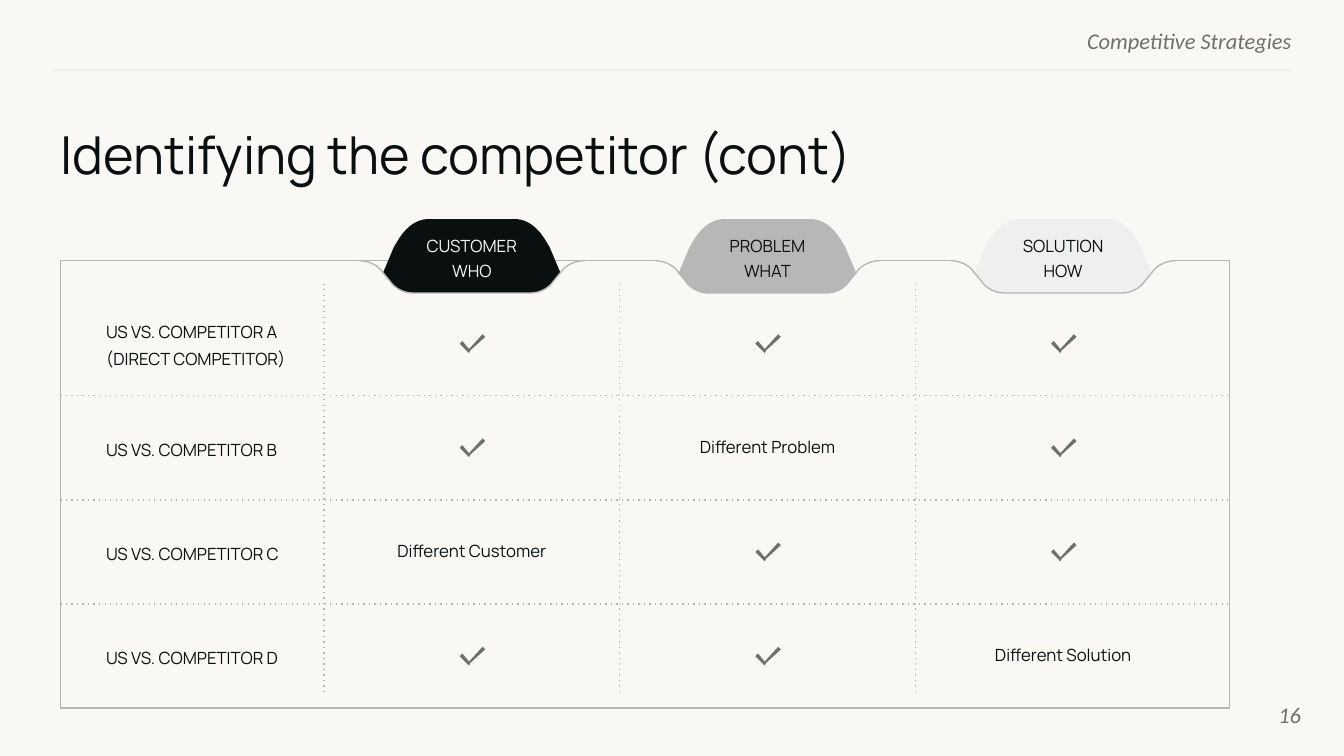
import lxml.etree
import pptx
import pptx.dml.color
import pptx.enum.dml
import pptx.enum.shapes
import pptx.enum.text
import pptx.oxml.ns
import pptx.util

RGB = pptx.dml.color.RGBColor
PAPER = RGB(0xF9, 0xF8, 0xF5)
INK = RGB(0x09, 0x10, 0x0F)
GREY = RGB(0x6C, 0x70, 0x6F)
RULE = RGB(0xB5, 0xB7, 0xB7)
MID = RGB(0xB7, 0xB7, 0xB7)
PALE = RGB(0xEF, 0xEF, 0xEF)

ALIGN = pptx.enum.text.PP_ALIGN
ANCHOR = pptx.enum.text.MSO_ANCHOR
WIDTH, HEIGHT = 1000, 562.5
LEFT, RIGHT, TOP, BOTTOM = 45, 915, 194, 527
COL_0, COL_STEP = 241, 220
ROW_0, ROW_STEP = 217, 77.5

HEADERS = [
    ("CUSTOMER\nWHO", INK, PAPER),
    ("PROBLEM\nWHAT", MID, INK),
    ("SOLUTION\nHOW", PALE, INK),
]
ROWS = [
    ("US VS. COMPETITOR A\n(DIRECT COMPETITOR)", ["", "", ""]),
    ("US VS. COMPETITOR B", ["", "Different Problem", ""]),
    ("US VS. COMPETITOR C", ["Different Customer", "", ""]),
    ("US VS. COMPETITOR D", ["", "", "Different Solution"]),
]
CHECK = [(8, -7), (-2, 4), (-7, -2), (-9, 0), (-2, 7), (-1, 5), (10, -5)]


def unit(n):
    return round(n * pptx.util.Inches(0.01))


def col_mid(col):
    return COL_0 + COL_STEP * (col + 0.5)


def row_mid(row):
    return ROW_0 + ROW_STEP * (row + 0.5)


def curve(a, b, c, d, steps=12):
    ts = [i / steps for i in range(steps + 1)]
    return [
        tuple(
            (1 - t) ** 3 * p + 3 * (1 - t) ** 2 * t * q + 3 * (1 - t) * t * t * u + t**3 * v
            for p, q, u, v in zip(a, b, c, d)
        )
        for t in ts
    ]


def mirrored(half):
    return half + [(-x, y) for x, y in reversed(half)]


BOWL = curve((61, 209), (57, 215), (50, 218), (44, 218))
NOTCH = mirrored(curve((84, 194), (77, 194), (70, 197), (66, 203)) + BOWL)
MASK = NOTCH + [(-84, 184), (84, 184)]
TAB = mirrored(
    curve((32, 163), (41, 163), (49, 169), (55, 179)) + [(58, 184), (66, 203)] + BOWL
)


class Deck:
    """Draw styled elements on a slide gridded in 1000 columns by 562.5 rows."""

    def __init__(self):
        self.prs = pptx.Presentation()
        self.prs.slide_width = unit(WIDTH)
        self.prs.slide_height = unit(HEIGHT)
        self.s = self.prs.slides.add_slide(self.prs.slide_layouts[6])
        self.s.background.fill.solid()
        self.s.background.fill.fore_color.rgb = PAPER

    def fill_text(self, sp, text, size=9, color=INK, font="Manrope", italic=False,
                  align=ALIGN.LEFT, anchor=ANCHOR.MIDDLE, spacing=None, insets=(0, 0, 0, 0)):
        tf = sp.text_frame
        tf.text = text
        tf.word_wrap = True
        tf.vertical_anchor = anchor
        tf.margin_left, tf.margin_top, tf.margin_right, tf.margin_bottom = map(unit, insets)
        for p in tf.paragraphs:
            p.alignment = align
            p.line_spacing = spacing
            for r in p.runs:
                r.font.name = font
                r.font.size = pptx.util.Pt(size)
                r.font.italic = italic
                r.font.color.rgb = color

    def text(self, x, y, w, h, text, **style):
        sp = self.s.shapes.add_textbox(unit(x), unit(y), unit(w), unit(h))
        self.fill_text(sp, text, **style)

    def cell(self, x, y, w, h, text, align=ALIGN.LEFT):
        self.text(x, y, w, h, text, align=align, spacing=1.33, insets=(7, 0, 7, 4))

    def paint(self, sp, fill=None, line=None):
        sp.shadow.inherit = False
        if fill is None:
            sp.fill.background()
        else:
            sp.fill.solid()
            sp.fill.fore_color.rgb = fill
        if line is None:
            sp.line.fill.background()
        else:
            sp.line.color.rgb = line
            sp.line.width = pptx.util.Pt(0.75)

    def box(self, x, y, w, h, line):
        kind = pptx.enum.shapes.MSO_SHAPE.RECTANGLE
        sp = self.s.shapes.add_shape(kind, unit(x), unit(y), unit(w), unit(h))
        self.paint(sp, line=line)

    def outline(self, points, dx, dy=0, fill=None, line=None):
        pts = [(unit(x + dx), unit(y + dy)) for x, y in points]
        fb = self.s.shapes.build_freeform(*pts[0], scale=1.0)
        fb.add_line_segments(pts[1:], close=fill is not None)
        sp = fb.convert_to_shape()
        self.paint(sp, fill, line)
        return sp

    def rule(self, x1, y1, x2, y2, color=RULE, dotted=True):
        kind = pptx.enum.shapes.MSO_CONNECTOR.STRAIGHT
        c = self.s.shapes.add_connector(kind, unit(x1), unit(y1), unit(x2), unit(y2))
        c.line.color.rgb = color
        c.line.width = pptx.util.Pt(0.75)
        qn = pptx.oxml.ns.qn
        if dotted:
            c.line.dash_style = pptx.enum.dml.MSO_LINE.ROUND_DOT
            for dash in c._element.iter(qn("a:prstDash")):
                dash.set("val", "dot")
        lxml.etree.SubElement(c._element.spPr, qn("a:effectLst"))

    def tab(self, col, text, fill, color):
        x = col_mid(col)
        if col:
            self.outline(MASK, x, fill=PAPER)
        sp = self.outline(TAB, x, fill=fill)
        self.fill_text(sp, text, color=color, align=ALIGN.CENTER, spacing=1.25,
                       insets=(7, 4, 7, 4))
        self.outline(NOTCH, x, line=RULE)

    def answer(self, col, row, text):
        x, y = col_mid(col), row_mid(row)
        if text:
            self.cell(x - 65, y - 21, 130, 39, text, ALIGN.CENTER)
        else:
            self.outline(CHECK, x, y, fill=GREY)


def main():
    d = Deck()
    note = dict(size=12, color=GREY, font="Calibri", italic=True, align=ALIGN.RIGHT)
    d.text(576, 20, 385, 18, "Competitive Strategies", anchor=ANCHOR.TOP, **note)
    d.rule(961, 52, 39, 52, PALE, dotted=False)
    d.box(LEFT, TOP, RIGHT - LEFT, BOTTOM - TOP, RULE)
    for row in range(1, len(ROWS)):
        y = ROW_0 + ROW_STEP * row
        d.rule(LEFT, y, RIGHT, y)
    for col, header in enumerate(HEADERS):
        d.tab(col, *header)
    for row, (label, answers) in enumerate(ROWS):
        h = 20 * len(label.split("\n"))
        d.cell(72, row_mid(row) + 1 - h / 2, 158, h, label)
        for col, text in enumerate(answers):
            d.answer(col, row, text)
    for col in range(len(HEADERS)):
        x = COL_0 + COL_STEP * col
        d.rule(x, 515, x, 211)
    d.text(45, 91, 923, 51, "Identifying the competitor (cont)", size=28, anchor=ANCHOR.TOP)
    d.text(908, 510, 60, 43, "16", **note)
    d.prs.save("out.pptx")


if __name__ == "__main__":
    main()
